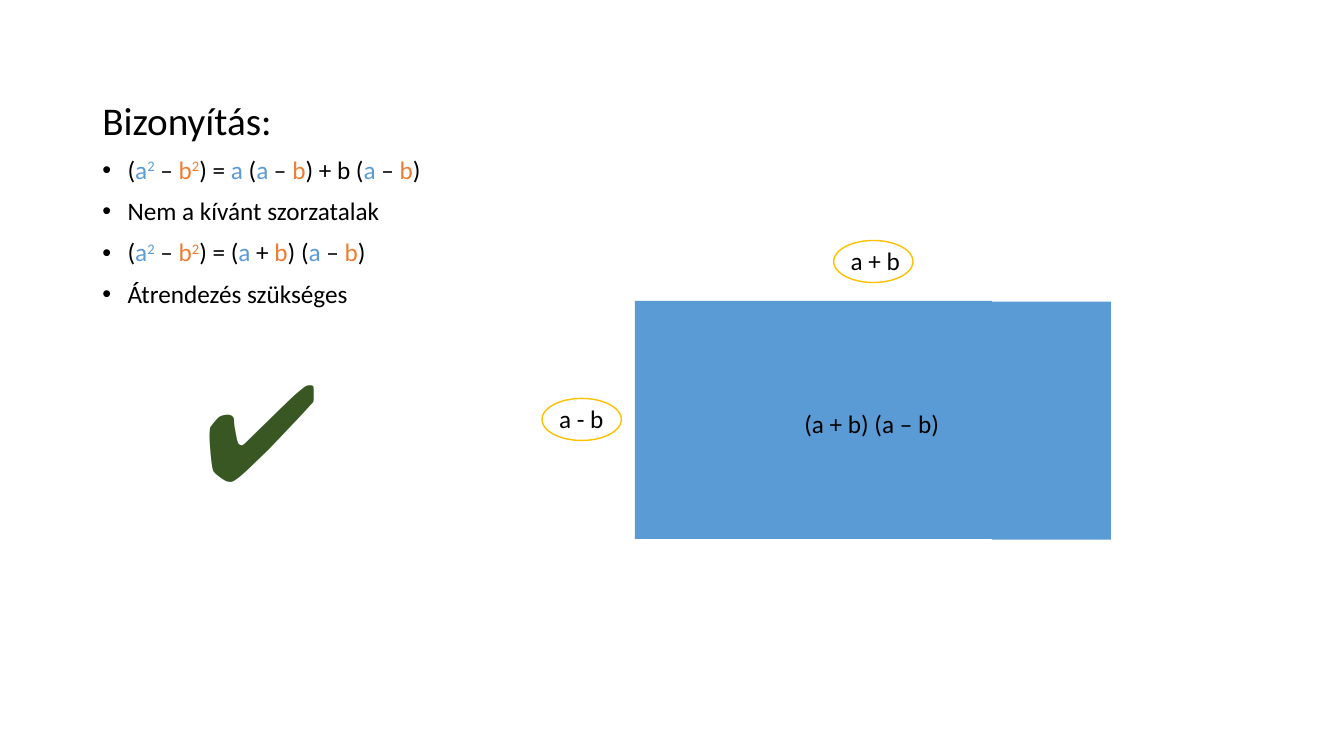
from lxml.etree import SubElement
from pptx import Presentation
from pptx.dml.color import RGBColor
from pptx.enum.shapes import MSO_SHAPE
from pptx.enum.text import MSO_AUTO_SIZE
from pptx.oxml.ns import qn
from pptx.util import Cm, Pt

BLACK = RGBColor(0x00, 0x00, 0x00)
BLUE = RGBColor(0x5B, 0x9B, 0xD5)
ORANGE = RGBColor(0xED, 0x7D, 0x31)
GOLD = RGBColor(0xFF, 0xC0, 0x00)
GREEN = RGBColor(0x38, 0x57, 0x23)

TERMS = {"a": BLUE, "a2": BLUE, "b": ORANGE, "b2": ORANGE}
LINES = [
    "(|a2| – |b2|) = |a| (|a| – |b|) + b (|a| – |b|)",
    "Nem a kívánt szorzatalak",
    "(|a2| – |b2|) = (|a| + |b|) (|a| – |b|)",
    "Átrendezés szükséges",
]


def apply(target, values):
    """Set each named attribute of the target."""
    for name, value in values.items():
        setattr(target, name, value)


def add_run(para, text, size=18, color=BLACK, power=False):
    """Add one formatted run, raised when it is a power."""
    run = para.add_run()
    run.text = text
    apply(run.font, {"name": "Calibri", "size": Pt(size)})
    run.font.color.rgb = color
    if power:
        run._r.get_or_add_rPr().set("baseline", "30000")


def add_line(para, text):
    """Fill a bulleted line, colouring its terms a and b."""
    props = para._p.get_or_add_pPr()
    props.set("marL", str(Cm(0.635)))
    props.set("indent", str(-Cm(0.635)))
    SubElement(props, qn("a:buFont")).set("typeface", "Arial")
    SubElement(props, qn("a:buChar")).set("char", "•")
    for part in text.split("|"):
        if part in TERMS:
            add_run(para, part[0], color=TERMS[part])
            if part[1:]:
                add_run(para, part[1:], color=TERMS[part], power=True)
        else:
            add_run(para, part)


def add_proof(slide):
    """Add the heading, the proof lines and the tick."""
    frame = slide.shapes.add_textbox(Cm(2.33), Cm(2.43), Cm(29.21), Cm(14.7)).text_frame
    frame.word_wrap = True
    gaps = {"line_spacing": 0.9, "space_before": Pt(10)}
    head = frame.paragraphs[0]
    apply(head, gaps)
    add_run(head, "Bizonyítás:", 28)
    for text in LINES:
        para = frame.add_paragraph()
        apply(para, gaps)
        add_line(para, text)
    tick = frame.add_paragraph()
    apply(tick, {**gaps, "space_before": Pt(40)})
    tick._p.get_or_add_pPr().set("marL", str(Cm(2.54)))
    add_run(tick, "✔", 96, GREEN)


def add_block(slide, left, top, width):
    """Add one blue part of the rectangle."""
    block = slide.shapes.add_shape(MSO_SHAPE.RECTANGLE, Cm(left), Cm(top), Cm(width), Cm(6))
    block.shadow.inherit = False
    block.fill.solid()
    block.fill.fore_color.rgb = BLUE
    block.line.fill.background()


def add_label(shapes, text, left, top, width):
    """Add a short unwrapped text."""
    box = shapes.add_textbox(Cm(left), Cm(top), Cm(width), Cm(1.03))
    apply(box.text_frame, {"word_wrap": False, "auto_size": MSO_AUTO_SIZE.SHAPE_TO_FIT_TEXT})
    add_run(box.text_frame.paragraphs[0], text)


def add_side(slide, text, left, top, width):
    """Add a side length ringed by an ellipse."""
    shapes = slide.shapes.add_group_shape().shapes
    add_label(shapes, text, left + 0.18, top, width)
    ring = shapes.add_shape(MSO_SHAPE.OVAL, Cm(left), Cm(top), Cm(2), Cm(1.06))
    ring.shadow.inherit = False
    ring.fill.background()
    ring.line.color.rgb = GOLD
    ring.line.width = Pt(1)


def main():
    """Build the slide and save it."""
    deck = Presentation()
    apply(deck, {"slide_width": Cm(33.87), "slide_height": Cm(19.05)})
    slide = deck.slides.add_slide(deck.slide_layouts[6])
    add_block(slide, 25, 7.6, 3)
    add_block(slide, 16, 7.58, 9)
    add_proof(slide)
    add_label(slide.shapes, "(a + b) (a – b)", 20.02, 10.16, 3.96)
    add_side(slide, "a - b", 13.66, 10.04, 1.8)
    add_side(slide, "a + b", 21.01, 6.06, 1.93)
    deck.save("out.pptx")


if __name__ == "__main__":
    main()
